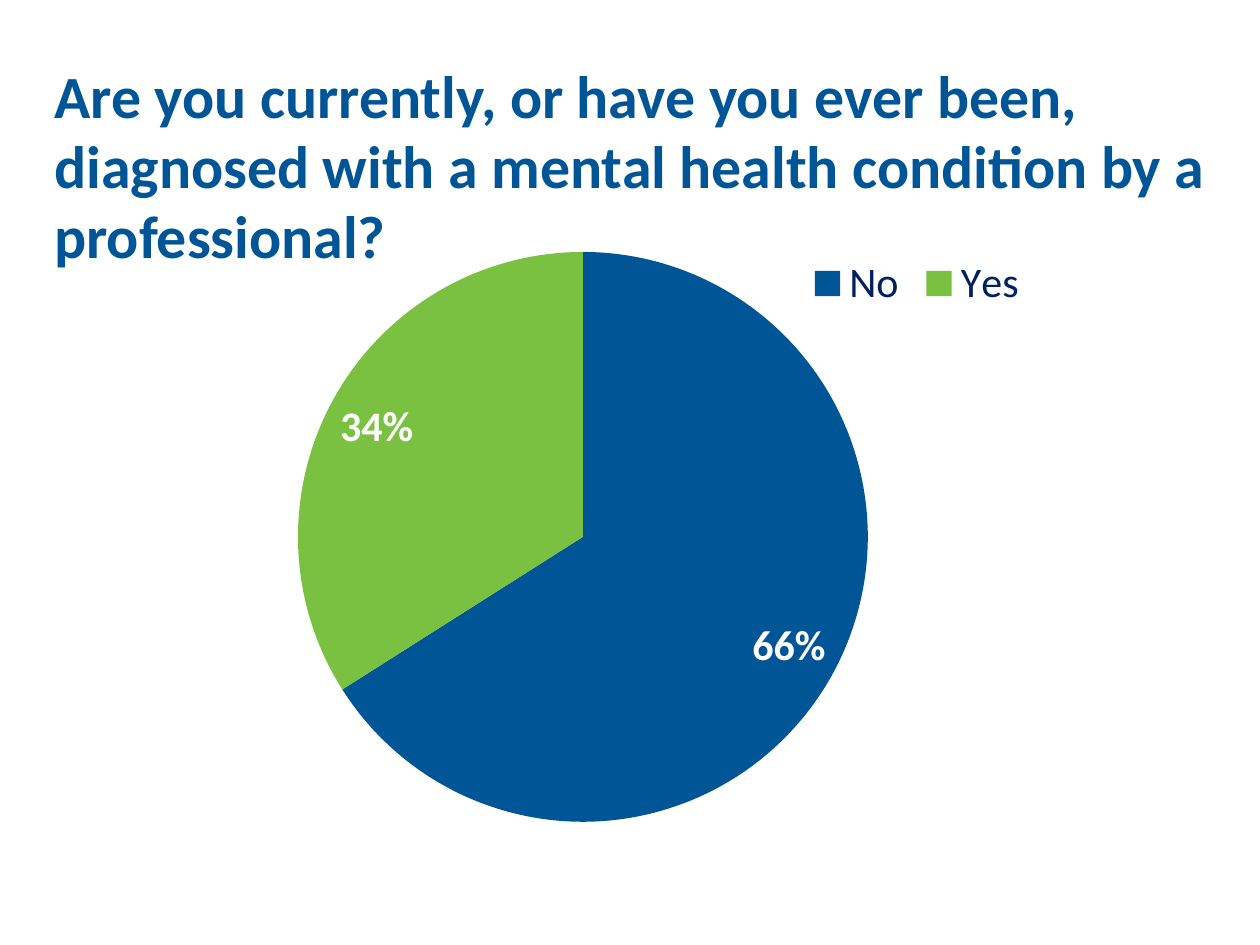
"""Build a slide with a pie chart of answers about mental health diagnoses."""
from typing import NamedTuple

from pptx import Presentation
from pptx.chart.data import CategoryChartData
from pptx.dml.color import RGBColor
from pptx.enum.chart import XL_CHART_TYPE as ChartType
from pptx.enum.chart import XL_LABEL_POSITION as LabelPosition
from pptx.enum.chart import XL_LEGEND_POSITION as LegendPosition
from pptx.enum.text import MSO_ANCHOR as Anchor
from pptx.oxml import parse_xml
from pptx.oxml.ns import nsdecls
from pptx.util import Pt

BLUE = RGBColor(0x00, 0x55, 0x96)
GREEN = RGBColor(0x7A, 0xC1, 0x42)
NAVY = RGBColor(0x00, 0x20, 0x60)
GREY = RGBColor(0x6A, 0x73, 0x7B)
WHITE = RGBColor(0xFF, 0xFF, 0xFF)
FONT = "Calibri"
PX_PER_INCH = 126
QUESTION = (
    "Are you currently, or have you ever been, diagnosed with "
    "a mental health condition by a professional?"
)


class Box(NamedTuple):
    left: int
    top: int
    width: int
    height: int


class Answer(NamedTuple):
    label: str
    percent: int
    color: RGBColor


ANSWERS = [Answer("No", 66, BLUE), Answer("Yes", 34, GREEN)]
QUESTION_BOX = Box(42, 116, 1184, 103)
CHART_BOX = Box(126, 158, 914, 683)
PIE_BOX = Box(298, 252, 570, 570)
LEGEND_BOX = Box(801, 258, 232, 50)


def px(length: int) -> int:
    return round(length * 914400 / PX_PER_INCH)


def emu(box: Box) -> list[int]:
    return [px(length) for length in box]


def style_font(font, size: float, color: RGBColor, bold: bool = False) -> None:
    font.name = FONT
    font.size = Pt(size)
    font.bold = bold
    font.color.rgb = color


def manual_layout(box: Box, target: str = ""):
    fractions = {
        "x": (box.left - CHART_BOX.left) / CHART_BOX.width,
        "y": (box.top - CHART_BOX.top) / CHART_BOX.height,
        "w": box.width / CHART_BOX.width,
        "h": box.height / CHART_BOX.height,
    }
    modes = '<c:xMode val="edge"/><c:yMode val="edge"/>'
    sizes = "".join(f'<c:{key} val="{value:.4f}"/>' for key, value in fractions.items())
    return parse_xml(
        f'<c:layout {nsdecls("c")}><c:manualLayout>{target}{modes}{sizes}'
        "</c:manualLayout></c:layout>"
    )


def add_question(slide) -> None:
    frame = slide.shapes.add_textbox(*emu(QUESTION_BOX)).text_frame
    frame.word_wrap = True
    frame.vertical_anchor = Anchor.MIDDLE
    paragraph = frame.paragraphs[0]
    paragraph.text = QUESTION
    paragraph.line_spacing = 0.98
    style_font(paragraph.font, 34.2, BLUE, bold=True)


def add_answer_pie(slide) -> None:
    data = CategoryChartData()
    data.categories = [answer.label for answer in ANSWERS]
    data.add_series("Series 1", [answer.percent for answer in ANSWERS])
    chart = slide.shapes.add_chart(ChartType.PIE, *emu(CHART_BOX), data).chart
    chart.has_title = False
    style_font(chart.font, 10, GREY)

    chart.has_legend = True
    legend = chart.legend
    legend.position = LegendPosition.TOP
    legend.include_in_layout = False
    style_font(legend.font, 24, NAVY)
    legend_position = legend._element.find(f"{{{legend._element.nsmap['c']}}}legendPos")
    legend_position.addnext(manual_layout(LEGEND_BOX))

    plot_area = chart._chartSpace.chart.plotArea
    for layout in plot_area.xpath("c:layout"):
        plot_area.remove(layout)
    plot_area.insert(0, manual_layout(PIE_BOX, '<c:layoutTarget val="inner"/>'))

    plot = chart.plots[0]
    plot.vary_by_categories = True
    for index, answer in enumerate(ANSWERS):
        fill = plot.series[0].points[index].format.fill
        fill.solid()
        fill.fore_color.rgb = answer.color

    plot.has_data_labels = True
    labels = plot.data_labels
    labels.show_value = False
    labels.show_percentage = True
    labels.number_format = "0%"
    labels.number_format_is_linked = False
    labels.position = LabelPosition.BEST_FIT
    style_font(labels.font, 24, WHITE, bold=True)


def main() -> None:
    presentation = Presentation()
    presentation.slide_width = px(1260)
    presentation.slide_height = px(945)
    slide = presentation.slides.add_slide(presentation.slide_layouts[6])
    add_question(slide)
    add_answer_pie(slide)
    presentation.save("out.pptx")


if __name__ == "__main__":
    main()
